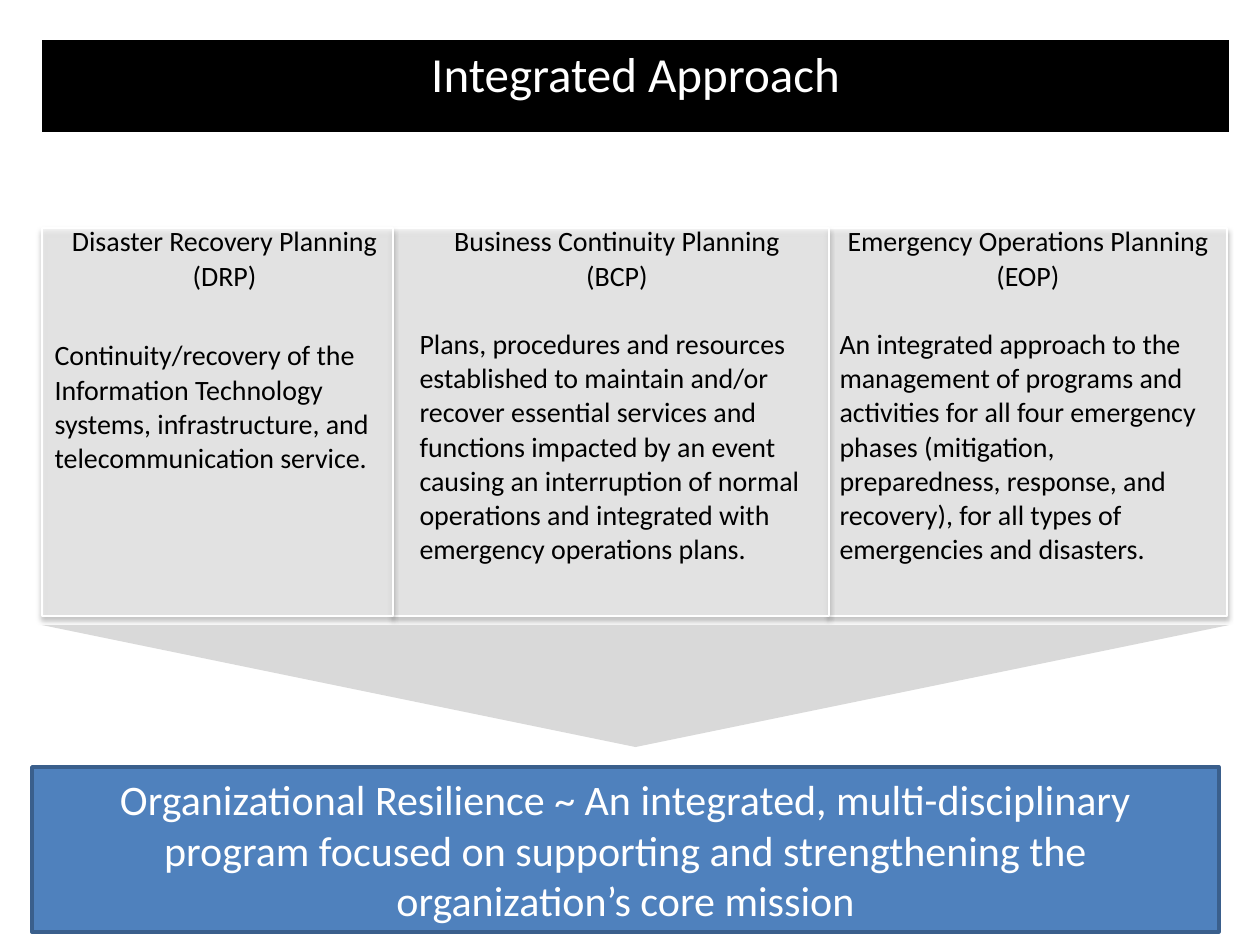
from itertools import accumulate

from lxml import etree
from pptx import Presentation
from pptx.dml.color import RGBColor
from pptx.enum.shapes import MSO_SHAPE
from pptx.enum.text import MSO_ANCHOR, PP_ALIGN
from pptx.oxml.ns import qn
from pptx.util import Pt

RECTANGLE = MSO_SHAPE.RECTANGLE
TRIANGLE = MSO_SHAPE.ISOSCELES_TRIANGLE
CENTER = PP_ALIGN.CENTER
LEFT = PP_ALIGN.LEFT
MIDDLE = MSO_ANCHOR.MIDDLE
EMU_PER_PX = 914400 / 126
BLANK_LAYOUT = 6
PLAIN_TABLE = "{2D5ABB26-0587-4C30-8999-92F81FD0307C}"
COLORS = {
    "black": "000000",
    "white": "FFFFFF",
    "panel": "F2F2F2",
    "arrow": "D9D9D9",
    "banner": "4F81BD",
    "banner_line": "3A5F8C",
}

TITLE = "Integrated Approach"
PLANS = [
    (
        ["Disaster Recovery Planning", "(DRP)"],
        26,
        "Continuity/recovery of the Information Technology systems, "
        "infrastructure, and telecommunication service.",
    ),
    (
        ["Business Continuity Planning", "(BCP)"],
        19.5,
        "Plans, procedures and resources established to maintain and/or recover "
        "essential services and functions impacted by an event causing an "
        "interruption of normal operations and integrated with emergency "
        "operations plans.",
    ),
    (
        ["Emergency Operations Planning (EOP)"],
        19.5,
        "An integrated approach to the management of programs and activities for "
        "all four emergency phases (mitigation, preparedness, response, and "
        "recovery), for all types of emergencies and disasters.",
    ),
]
RESILIENCE = (
    "Organizational Resilience ~ An integrated, multi-disciplinary program focused "
    "on supporting and strengthening the organization’s core mission"
)


def px(length):
    return round(length * EMU_PER_PX)


def rgb(name):
    return RGBColor.from_string(COLORS[name])


def write(frame, text, *, size, color, align=LEFT, before=0, first=False):
    paragraph = frame.paragraphs[0] if first else frame.add_paragraph()
    paragraph.alignment = align
    paragraph.space_before = Pt(before)
    run = paragraph.add_run()
    run.text = text
    run.font.name = "Calibri"
    run.font.size = Pt(size)
    run.font.color.rgb = rgb(color)


class SlideBuilder:
    def __init__(self, slide):
        self.slide = slide

    def shape(self, kind, box, fill, line=None, line_width=0):
        shape = self.slide.shapes.add_shape(kind, *map(px, box))
        shape.shadow.inherit = False
        shape.fill.solid()
        shape.fill.fore_color.rgb = rgb(fill)
        if line:
            shape.line.color.rgb = rgb(line)
            shape.line.width = Pt(line_width)
        else:
            shape.line.fill.background()
        return shape

    def panel(self, box):
        shape = self.shape(RECTANGLE, box, "panel", "white", 0.75)
        properties = shape._element.spPr
        fill_color = properties.find(qn("a:solidFill")).find(qn("a:srgbClr"))
        etree.SubElement(fill_color, qn("a:alpha"), val="64000")
        shadow = etree.SubElement(
            properties.find(qn("a:effectLst")),
            qn("a:outerShdw"),
            blurRad=str(Pt(3.1)),
            dist=str(Pt(1.8)),
            dir="5400000",
            rotWithShape="0",
        )
        shadow_color = etree.SubElement(shadow, qn("a:srgbClr"), val=COLORS["black"])
        etree.SubElement(shadow_color, qn("a:alpha"), val="35000")

    def table(self, left, top, widths, heights):
        box = left, top, sum(widths), sum(heights)
        frame = self.slide.shapes.add_table(len(heights), len(widths), *map(px, box))
        table = frame.table
        table.first_row = False
        table.horz_banding = False
        table._tbl.tblPr.find(qn("a:tableStyleId")).text = PLAIN_TABLE
        for column, width in zip(table.columns, widths):
            column.width = px(width)
        for row, height in zip(table.rows, heights):
            row.height = px(height)
        for cell in table.iter_cells():
            cell.fill.background()
        return table

    def plan_table(self):
        table = self.table(42, 40, [365, 420, 402], [92, 87, 294])
        title_cell = table.cell(0, 0)
        title_cell.merge(table.cell(0, 2))
        title_cell.fill.solid()
        title_cell.fill.fore_color.rgb = rgb("black")
        write(title_cell.text_frame, TITLE, size=28, color="white",
              align=CENTER, first=True)
        for column, (headings, gap, body) in enumerate(PLANS):
            frame = table.cell(2, column).text_frame
            for index, heading in enumerate(headings):
                write(frame, heading, size=16, color="black",
                      align=CENTER, first=index == 0)
            write(frame, body, size=16, color="black", before=gap)

    def banner(self, box, text):
        shape = self.shape(RECTANGLE, box, "banner", "banner_line", 2)
        frame = shape.text_frame
        frame.word_wrap = True
        frame.vertical_anchor = MIDDLE
        write(frame, text, size=24, color="white", align=CENTER, first=True)

    def down_arrow(self, box):
        self.shape(TRIANGLE, box, "arrow").rotation = 180


def main():
    presentation = Presentation()
    presentation.slide_width = px(1260)
    presentation.slide_height = px(945)
    layout = presentation.slide_layouts[BLANK_LAYOUT]
    builder = SlideBuilder(presentation.slides.add_slide(layout))

    panel_widths = [351, 436, 398]
    panel_lefts = accumulate(panel_widths[:-1], initial=42)
    for left, width in reversed(list(zip(panel_lefts, panel_widths))):
        builder.panel((left, 228, width, 388))
    builder.plan_table()
    builder.banner((32, 767, 1187, 165), RESILIENCE)
    builder.down_arrow((42, 625, 1187, 122))

    presentation.save("out.pptx")


if __name__ == "__main__":
    main()
